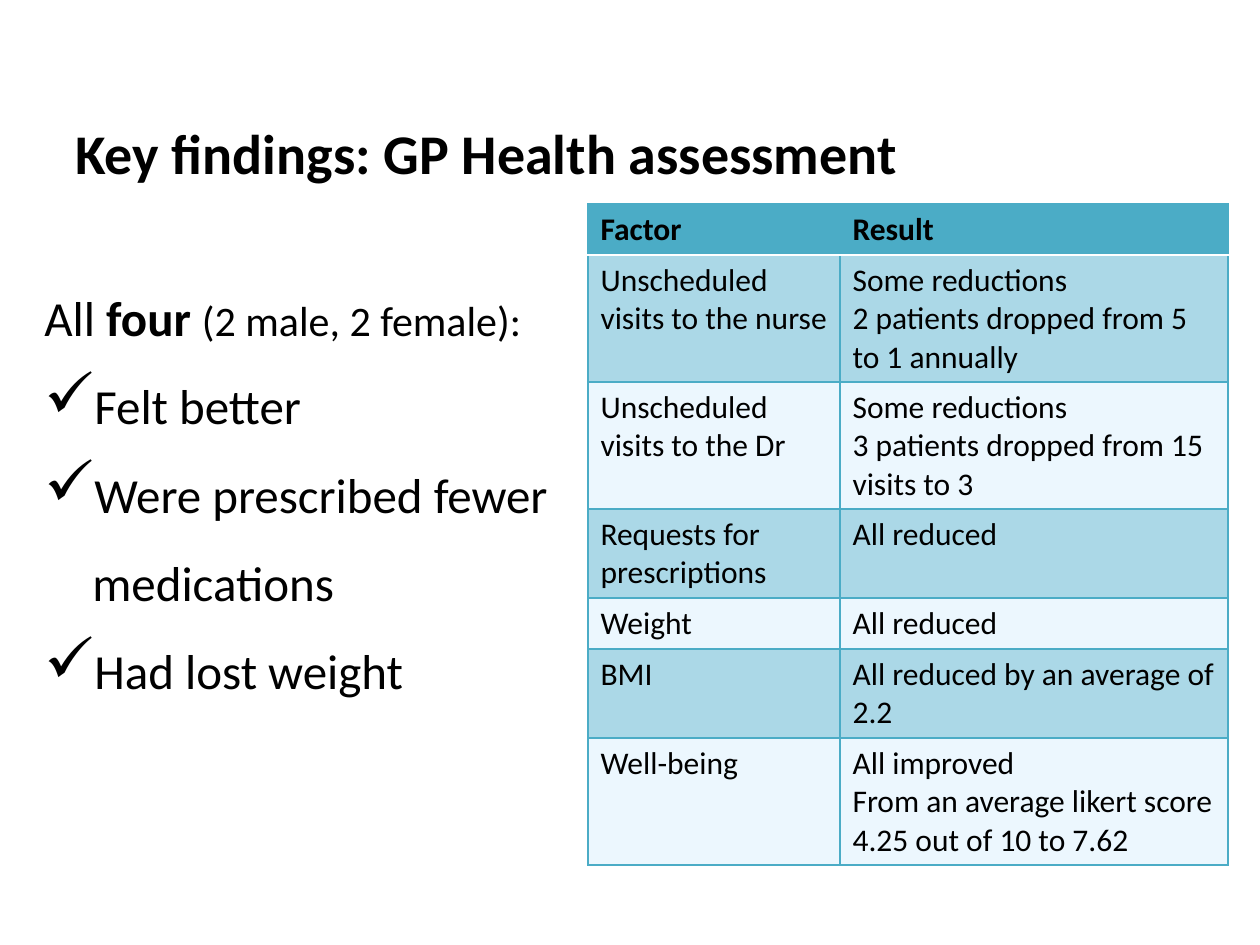
from lxml import etree
from pptx import Presentation
from pptx.dml.color import RGBColor
from pptx.enum.text import MSO_ANCHOR
from pptx.oxml.ns import qn
from pptx.util import Emu, Pt

MIDDLE, TOP = MSO_ANCHOR.MIDDLE, MSO_ANCHOR.TOP
FONT = "Calibri"
COLORS = {"text": "000000", "teal": "4BACC6", "band": "ABD8E7",
          "pale": "ECF7FE", "white": "FFFFFF"}

TITLE = "Key findings: GP Health assessment"
INTRO = [("All ", 28, False), ("four ", 28, True), ("(2 male, 2 female):", 24, False)]
OUTCOMES = ["Felt better", "Were prescribed fewer medications", "Had lost weight"]

# Factor, result, lines of text in the row
FINDINGS = [
    ("Factor", "Result", 1),
    ("Unscheduled visits to the nurse",
     "Some reductions\n2 patients dropped from 5 to 1 annually", 3),
    ("Unscheduled visits to the Dr",
     "Some reductions\n3 patients dropped from 15 visits to 3", 3),
    ("Requests for prescriptions", "All reduced", 2),
    ("Weight", "All reduced", 1),
    ("BMI", "All reduced by an average of 2.2", 2),
    ("Well-being", "All improved\nFrom an average likert score 4.25 out of 10 to 7.62", 3),
]


def px(length):
    return Emu(round(length * 914400 / 126))


def style(font, size, bold=False):
    font.name, font.size, font.bold = FONT, Pt(size), bold
    font.color.rgb = RGBColor.from_string(COLORS["text"])


def add_frame(slide, box, anchor):
    frame = slide.shapes.add_textbox(*map(px, box)).text_frame
    frame.word_wrap = True
    frame.vertical_anchor = anchor
    return frame


def add_title(slide, box):
    frame = add_frame(slide, box, MIDDLE)
    frame.text = TITLE
    style(frame.paragraphs[0].runs[0].font, 32, True)


def add_check_mark(paragraph, indent):
    properties = paragraph._p.get_or_add_pPr()
    properties.set("marL", str(px(indent)))
    properties.set("indent", str(-px(indent)))
    etree.SubElement(properties, qn("a:buSzPct")).set("val", "130000")
    etree.SubElement(properties, qn("a:buChar")).set("char", "✓")


def add_outcomes(slide, box):
    frame = add_frame(slide, box, TOP)
    intro = frame.paragraphs[0]
    intro.line_spacing = 1.5
    for text, size, bold in INTRO:
        run = intro.add_run()
        run.text = text
        style(run.font, size, bold)
    for text in OUTCOMES:
        outcome = frame.add_paragraph()
        outcome.text = text
        outcome.line_spacing = 1.5
        add_check_mark(outcome, 48)
        style(outcome.runs[0].font, 28)


def add_border(cell, side, color, width):
    line = etree.SubElement(cell._tc.get_or_add_tcPr(), qn("a:ln" + side))
    line.set("w", str(Pt(width)))
    fill = etree.SubElement(line, qn("a:solidFill"))
    etree.SubElement(fill, qn("a:srgbClr")).set("val", COLORS[color])


def add_findings(slide, box, factor_width):
    left, top, width, height = box
    table = slide.shapes.add_table(len(FINDINGS), 2, *map(px, box)).table
    table.columns[0].width = px(factor_width)
    table.columns[1].width = px(width - factor_width)
    for row, (factor, result, lines) in enumerate(FINDINGS):
        table.rows[row].height = px(13 + 38 * lines)
        # Header, then alternating bands
        fill = "teal" if row == 0 else "band" if row % 2 else "pale"
        rule_below_header = {0: "B", 1: "T"}.get(row)
        for column, text in enumerate((factor, result)):
            cell = table.cell(row, column)
            cell.text = text
            for paragraph in cell.text_frame.paragraphs:
                style(paragraph.runs[0].font, 18, row == 0)
            for side in "LRTB":
                if side == rule_below_header:
                    add_border(cell, side, "white", 1.5)
                else:
                    add_border(cell, side, "teal", 0.75)
            cell.fill.solid()
            cell.fill.fore_color.rgb = RGBColor.from_string(COLORS[fill])


def main():
    presentation = Presentation()
    presentation.slide_width, presentation.slide_height = px(1260), px(945)
    slide = presentation.slides.add_slide(presentation.slide_layouts[6])
    add_title(slide, (63, 105, 1134, 94))
    add_outcomes(slide, (32, 252, 546, 630))
    add_findings(slide, (588, 204, 640, 656), 252)
    presentation.save("out.pptx")


if __name__ == "__main__":
    main()
